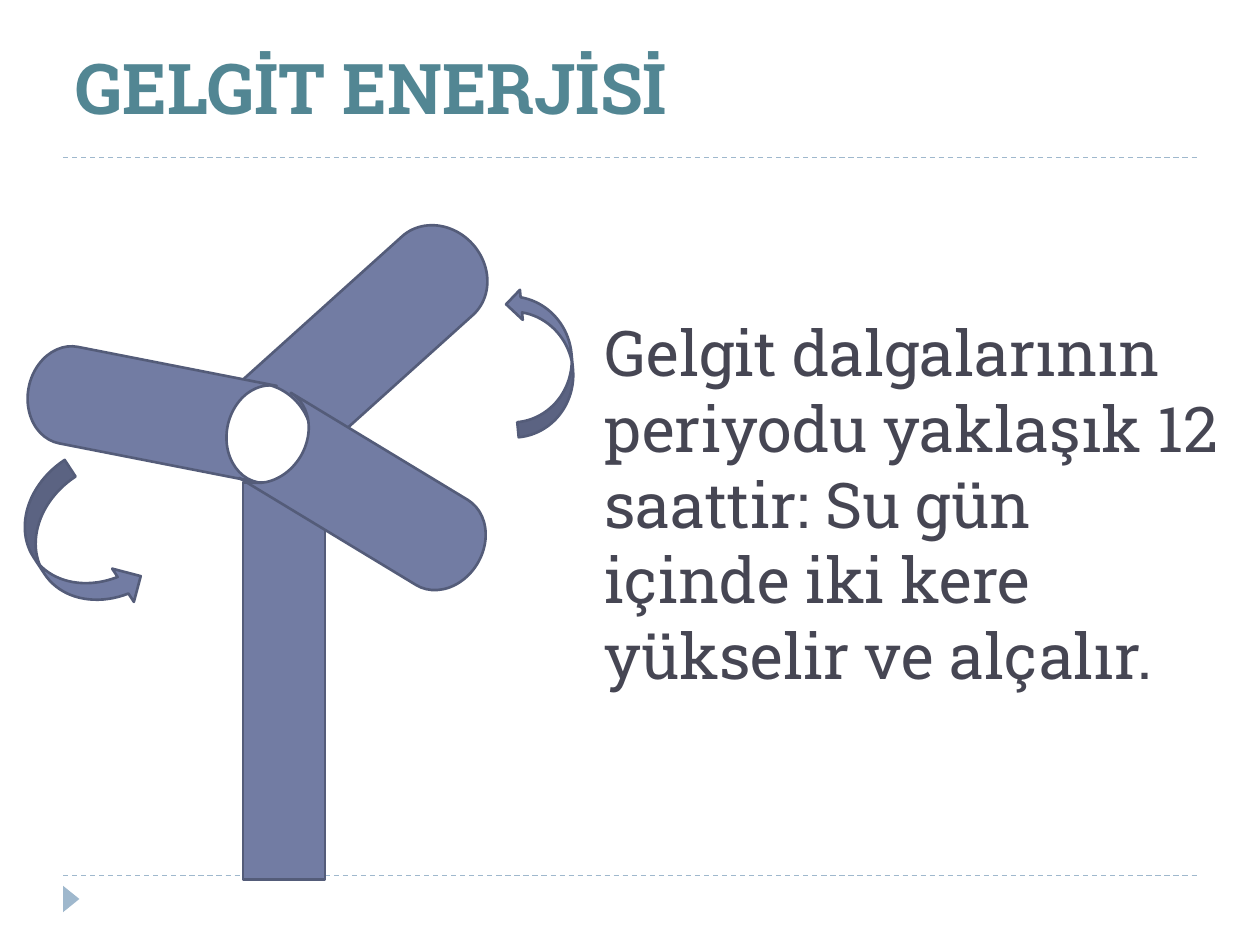
import pptx
import pptx.dml.color
import pptx.enum.dml
import pptx.enum.shapes
import pptx.enum.text
import pptx.oxml
import pptx.util
from pptx.util import Inches

RGBColor = pptx.dml.color.RGBColor
SHAPE = pptx.enum.shapes.MSO_SHAPE

TITLE_COLOR = RGBColor(0x52, 0x86, 0x93)
BODY_COLOR = RGBColor(0x46, 0x46, 0x53)
TURBINE_FILL = RGBColor(0x72, 0x7C, 0xA3)
TURBINE_LINE = RGBColor(0x54, 0x5C, 0x79)
ACCENT = RGBColor(0x9F, 0xB8, 0xCD)

FONT_NAME = "Roboto Slab"
RULE_HEIGHTS = (6.95, 1.25)

# Shape, (left, top, width, height), rotation; from back to front.
TURBINE_PARTS = (
    (SHAPE.CURVED_RIGHT_ARROW, (0.28, 3.72, 0.63, 1.26), 326.8),
    (SHAPE.CURVED_RIGHT_ARROW, (4.06, 2.27, 0.48, 1.18), 174.6),
    (SHAPE.RECTANGLE, (1.93, 3.83, 0.65, 3.15), 0),
    (SHAPE.FLOWCHART_STORED_DATA, (1.79, 2.27, 2.25, 0.84), 138),
    (SHAPE.FLOWCHART_STORED_DATA, (0.21, 2.87, 1.93, 0.78), 11.1),
    (SHAPE.FLOWCHART_STORED_DATA, (1.96, 3.57, 1.97, 0.79), 211.2),
)


def add_rule(slide, top):
    """Add a dashed line across the content width."""
    rule = slide.shapes.add_connector(
        pptx.enum.shapes.MSO_CONNECTOR.STRAIGHT,
        Inches(0.5), Inches(top), Inches(9.5), Inches(top))
    rule.line.color.rgb = ACCENT
    rule.line.width = pptx.util.Pt(0.75)
    rule.line.dash_style = pptx.enum.dml.MSO_LINE.DASH
    rule._element.spPr.append(pptx.oxml.parse_xml(
        '<a:effectLst xmlns:a='
        '"http://schemas.openxmlformats.org/drawingml/2006/main"/>'))


def add_solid(slide, kind, box, rotation, fill, line=None):
    shape = slide.shapes.add_shape(kind, *map(Inches, box))
    shape.rotation = rotation
    shape.shadow.inherit = False
    shape.fill.solid()
    shape.fill.fore_color.rgb = fill
    if line is None:
        shape.line.fill.background()
    else:
        shape.line.color.rgb = line
        shape.line.width = pptx.util.Pt(1.5)


def write_text(shape, box, text, size, color, bold=False):
    """Place a text shape and fill it with one bottom-anchored paragraph."""
    shape.left, shape.top, shape.width, shape.height = map(Inches, box)
    frame = shape.text_frame
    frame_format = {
        "word_wrap": True,
        "auto_size": pptx.enum.text.MSO_AUTO_SIZE.NONE,
        "vertical_anchor": pptx.enum.text.MSO_ANCHOR.BOTTOM,
    }
    for name, value in frame_format.items():
        setattr(frame, name, value)
    paragraph = frame.paragraphs[0]
    paragraph.alignment = pptx.enum.text.PP_ALIGN.LEFT
    run = paragraph.add_run()
    run.text = text
    font_format = {"name": FONT_NAME, "size": pptx.util.Pt(size), "bold": bold}
    for name, value in font_format.items():
        setattr(run.font, name, value)
    run.font.color.rgb = color


def main():
    presentation = pptx.Presentation()
    presentation.slide_width = Inches(10)
    presentation.slide_height = Inches(7.5)
    slide = presentation.slides.add_slide(
        presentation.slide_layouts.get_by_name("Title Only"))

    for top in RULE_HEIGHTS:
        add_rule(slide, top)
    add_solid(slide, SHAPE.ISOSCELES_TRIANGLE, (0.46, 7.07, 0.21, 0.13), 90, ACCENT)
    write_text(slide.shapes.title, (0.5, 0.25, 9, 0.82),
               "GELGİT ENERJİSİ", 40, TITLE_COLOR, bold=True)

    for kind, box, rotation in TURBINE_PARTS:
        add_solid(slide, kind, box, rotation, TURBINE_FILL, TURBINE_LINE)

    body = slide.shapes.add_textbox(0, 0, 0, 0)
    write_text(body, (4.7, 0.19, 5.14, 5.35),
               "Gelgit dalgalarının periyodu yaklaşık 12 saattir: "
               "Su gün içinde iki kere yükselir ve alçalır.", 36, BODY_COLOR)

    presentation.save("out.pptx")


if __name__ == "__main__":
    main()
